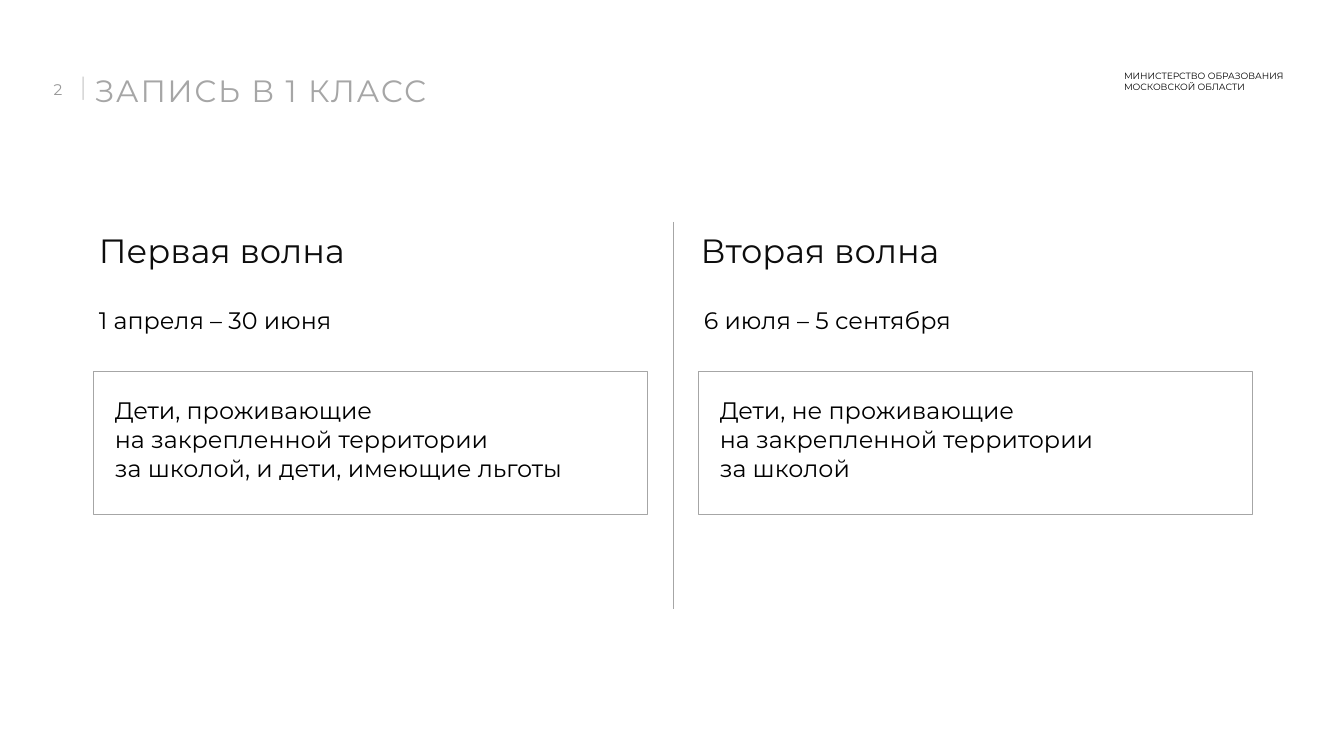
import pptx
import pptx.dml.color
import pptx.enum.shapes
import pptx.enum.text
import pptx.util
from lxml import etree
from pptx.oxml.ns import qn

WIDTH, HEIGHT = 13.33, 7.5
FONT = "Montserrat"
COLORS = {
    "text": "000000",
    "heading": "0D0D0D",
    "title": "A6A6A6",
    "line": "A6A6A6",
    "number": "999999",
    "bar": "D5D5D5",
}
WAVES = [
    {
        "heading": "Первая волна",
        "dates": "1 апреля – 30 июня",
        "children": "Дети, проживающие\vна закрепленной территории\v"
                    "за школой, и дети, имеющие льготы",
        "heading_shift": 0,
    },
    {
        "heading": "Вторая волна",
        "dates": "6 июля – 5 сентября",
        "children": "Дети, не проживающие\vна закрепленной территории\vза школой",
        "heading_shift": -0.03,
    },
]


def color(name):
    """Return the palette colour with the given name."""
    return pptx.dml.color.RGBColor.from_string(COLORS[name])


def inches(*lengths):
    """Convert lengths in inches to slide units."""
    return [pptx.util.Inches(length) for length in lengths]


def write(holder, text, size, ink="text", insets=(0.05, 0.05, 0.05, 0.05),
          align=pptx.enum.text.PP_ALIGN.LEFT, tracking=None):
    """Fill a shape with one formatted paragraph."""
    frame = holder.text_frame
    frame.word_wrap = True
    frame.vertical_anchor = pptx.enum.text.MSO_ANCHOR.TOP
    (frame.margin_left, frame.margin_top,
     frame.margin_right, frame.margin_bottom) = inches(*insets)
    paragraph = frame.paragraphs[0]
    paragraph.text = text
    paragraph.alignment = align
    for run in paragraph.runs:
        run.font.name = FONT
        run.font.size = pptx.util.Pt(size)
        run.font.color.rgb = color(ink)
        if tracking:
            run._r.get_or_add_rPr().set("spc", str(round(tracking * 100)))


def add_text(slide, box, text, size, **style):
    """Add a text box at the given place."""
    write(slide.shapes.add_textbox(*inches(*box)), text, size, **style)


def add_header(slide, box):
    """Place the page number, title and ministry name across the box."""
    left, top, width, height = box
    right = left + width
    add_text(slide, (left, top + 0.13, 0.46, 0.19), "2", 11, ink="number",
             insets=(0, 0.01, 0, 0), align=pptx.enum.text.PP_ALIGN.RIGHT)
    add_text(slide, (left + 0.51, top + 0.05, 0.34, height), "│", 14, ink="bar",
             insets=(0.1, 0.05, 0.1, 0.05))
    add_text(slide, (left + 0.78, top + 0.06, 0.7 * width, height),
             "ЗАПИСЬ В 1 КЛАСС", 22, ink="title", insets=(0, 0, 0, 0), tracking=1.2)
    add_text(slide, (right - 1.96, top, 1.96, height),
             "МИНИСТЕРСТВО ОБРАЗОВАНИЯ\vМОСКОВСКОЙ ОБЛАСТИ", 6.5,
             insets=(0.1, 0.05, 0.1, 0.05))


def add_wave(slide, box, wave):
    """Stack the heading, dates and framed description of a wave in the box."""
    left, top, width, height = box
    add_text(slide, (left + wave["heading_shift"], top, width, 0.5),
             wave["heading"], 24, ink="heading")
    add_text(slide, (left, top + 0.75, width, 0.4), wave["dates"], 17)
    frame_top = top + 1.45
    children = slide.shapes.add_shape(
        pptx.enum.shapes.MSO_SHAPE.RECTANGLE,
        *inches(left, frame_top, width, top + height - frame_top))
    children.shadow.inherit = False
    children.fill.background()
    children.line.color.rgb = color("line")
    children.line.width = pptx.util.Pt(0.5)
    write(children, wave["children"], 17, insets=(0.21, 0.25, 0.05, 0.05))


def add_divider(slide, x, top, bottom):
    """Draw the vertical rule between the waves."""
    divider = slide.shapes.add_connector(
        pptx.enum.shapes.MSO_CONNECTOR.STRAIGHT, *inches(x, top, x, bottom))
    divider.line.color.rgb = color("line")
    divider.line.width = pptx.util.Pt(0.5)
    etree.SubElement(divider._element.spPr, qn("a:effectLst"))


def main():
    """Build and save the slide."""
    deck = pptx.Presentation()
    deck.slide_width, deck.slide_height = inches(WIDTH, HEIGHT)
    slide = deck.slides.add_slide(deck.slide_layouts[6])
    add_header(slide, (0.16, 0.65, WIDTH - 0.48, 0.34))
    column_left, column_step, column_width = 0.93, 6, 5.49
    for index, wave in enumerate(WAVES):
        left = column_left + index * column_step
        add_wave(slide, (left, 2.23, column_width, 2.87), wave)
    gap_middle = column_left + (column_step + column_width) / 2
    add_divider(slide, gap_middle, 2.2, 6.04)
    deck.save("out.pptx")


if __name__ == "__main__":
    main()
